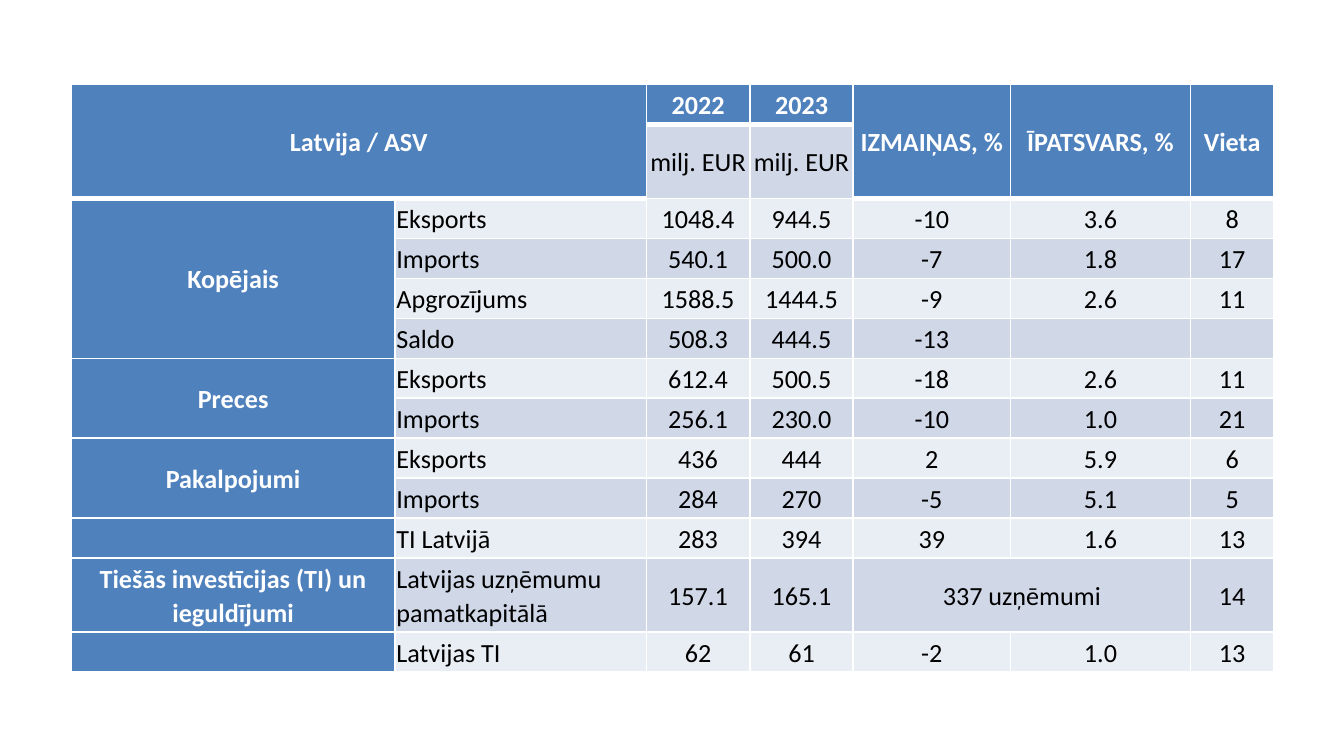
"""Build a slide with the Latvia / USA trade and investment table."""
from lxml.etree import SubElement
from pptx import Presentation
from pptx.dml.color import RGBColor
from pptx.enum.text import MSO_ANCHOR, PP_ALIGN
from pptx.oxml.ns import qn
from pptx.util import Inches, Pt

WHITE = RGBColor(0xFF, 0xFF, 0xFF)
BLACK = RGBColor(0x00, 0x00, 0x00)
BLUE = RGBColor(0x4F, 0x81, 0xBD)
LIGHT = RGBColor(0xE9, 0xED, 0xF4)
DARK = RGBColor(0xD0, 0xD8, 0xE8)

ROWS = [
    ("Latvija / ASV", "", "2022", "2023", "IZMAIŅAS, %", "ĪPATSVARS, %", "Vieta"),
    ("", "", "milj. EUR", "milj. EUR", "", "", ""),
    ("Kopējais", "Eksports", "1048.4", "944.5", "-10", "3.6", "8"),
    ("", "Imports", "540.1", "500.0", "-7", "1.8", "17"),
    ("", "Apgrozījums", "1588.5", "1444.5", "-9", "2.6", "11"),
    ("", "Saldo", "508.3", "444.5", "-13", "", ""),
    ("Preces", "Eksports", "612.4", "500.5", "-18", "2.6", "11"),
    ("", "Imports", "256.1", "230.0", "-10", "1.0", "21"),
    ("Pakalpojumi", "Eksports", "436", "444", "2", "5.9", "6"),
    ("", "Imports", "284", "270", "-5", "5.1", "5"),
    ("", "TI Latvijā", "283", "394", "39", "1.6", "13"),
    ("Tiešās investīcijas (TI) un ieguldījumi", "Latvijas uzņēmumu pamatkapitālā",
     "157.1", "165.1", "337 uzņēmumi", "", "14"),
    ("", "Latvijas TI", "62", "61", "-2", "1.0", "13"),
]
MERGES = [((0, 0), (1, 1)), ((0, 4), (1, 4)), ((0, 5), (1, 5)), ((0, 6), (1, 6)),
          ((2, 0), (5, 0)), ((6, 0), (7, 0)), ((8, 0), (9, 0)), ((11, 4), (11, 5))]
COL_WIDTHS = [2.41, 1.87, 0.77, 0.77, 1.17, 1.34, 0.62]
LEFT, TOP, HEIGHT = 0.53, 0.63, 4.37
TALL_ROWS, TALL = (1, 11), 0.55
UNIT_COLS = (2, 3)


def add_border(cell, side, width):
    """Add a white border line on one side of a cell."""
    ln = SubElement(cell._tc.get_or_add_tcPr(), qn(f"a:ln{side}"), w=str(Pt(width)))
    fill = SubElement(ln, qn("a:solidFill"))
    SubElement(fill, qn("a:srgbClr"), val=str(WHITE))


def format_cell(cell, row, col, text):
    """Fill one cell and set its text, borders and colours."""
    unit = row == 1 and col in UNIT_COLS
    header = col == 0 or (row < 2 and not unit)
    thick = row == 0 or (row == 1 and not unit)
    for side in "LR":
        add_border(cell, side, 1)
    if row == 0:
        add_border(cell, "T", 1)
    add_border(cell, "B", 3 if thick else 1)
    cell.fill.solid()
    cell.fill.fore_color.rgb = BLUE if header else DARK if row % 2 else LIGHT
    cell.vertical_anchor = MSO_ANCHOR.MIDDLE
    cell.margin_left = cell.margin_right = Inches(0.01)
    cell.margin_top = cell.margin_bottom = 0
    cell.text = text
    p = cell.text_frame.paragraphs[0]
    p.alignment = PP_ALIGN.LEFT if col == 1 else PP_ALIGN.CENTER
    p.line_spacing = 1.07
    p.space_after = Pt(8)
    p.font.name = "Calibri"
    p.font.size = Pt(14)
    p.font.bold = header
    p.font.color.rgb = WHITE if header else BLACK


def main():
    """Create and save the presentation."""
    prs = Presentation()
    prs.slide_width = Inches(10)
    prs.slide_height = prs.slide_width * 9 // 16
    s = prs.slides.add_slide(prs.slide_layouts[6])
    table = s.shapes.add_table(len(ROWS), len(COL_WIDTHS), Inches(LEFT), Inches(TOP),
                               Inches(sum(COL_WIDTHS)), Inches(HEIGHT)).table
    for column, width in zip(table.columns, COL_WIDTHS):
        column.width = Inches(width)
    normal = (HEIGHT - TALL * len(TALL_ROWS)) / (len(ROWS) - len(TALL_ROWS))
    for i, values in enumerate(ROWS):
        table.rows[i].height = Inches(TALL if i in TALL_ROWS else normal)
        for j, text in enumerate(values):
            format_cell(table.cell(i, j), i, j, text)
    for first, last in MERGES:
        table.cell(*first).merge(table.cell(*last))
    prs.save("out.pptx")


if __name__ == "__main__":
    main()
